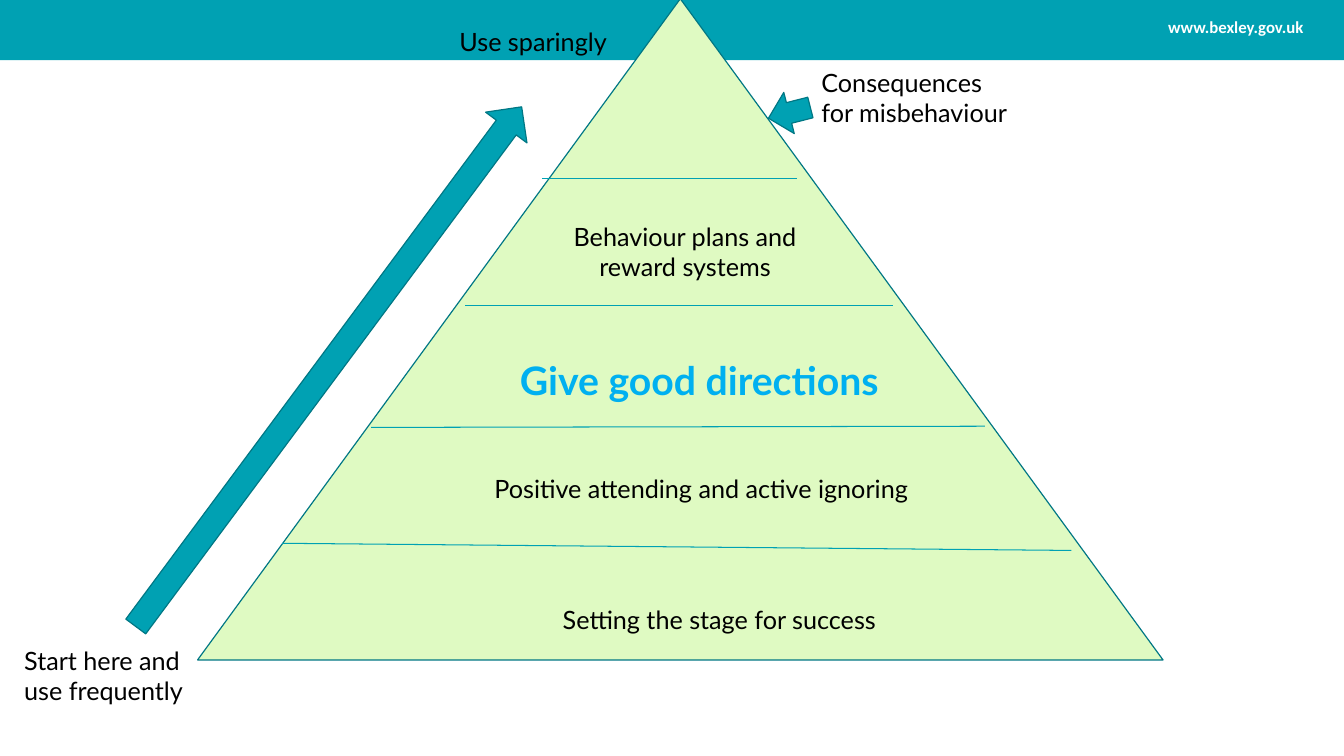
from pptx import Presentation
from pptx.dml.color import RGBColor
from pptx.enum.shapes import MSO_CONNECTOR, MSO_SHAPE
from pptx.enum.text import PP_ALIGN
from pptx.oxml.ns import qn
from pptx.util import Cm, Pt
from lxml.etree import SubElement

TEAL = RGBColor(0x00, 0xA1, 0xB3)
DARK_TEAL = RGBColor(0x00, 0x77, 0x84)
PALE_GREEN = RGBColor(0xDF, 0xFA, 0xC2)
SKY_BLUE = RGBColor(0x00, 0xB0, 0xF0)
BLACK = RGBColor(0x00, 0x00, 0x00)
WHITE = RGBColor(0xFF, 0xFF, 0xFF)

# Places are left, top, width, height in centimetres.
SLIDE_SIZE = (33.87, 19.05)
BANNER = (0, 0, 33.87, 1.52)
PYRAMID = (4.98, -0.03, 24.33, 16.66)
FREQUENCY_ARROW = (0.13, 8.59, 16.31, 1.3)
CONSEQUENCES_ARROW = (19.35, 2.31, 1.09, 1.07)

WEB_ADDRESS = ("www.bexley.gov.uk", (29.01, 0.3, 4.27, 0.76))
HIGHLIGHTED_LEVEL = ("Give good directions", (12.73, 8.86, 9.78, 1.45))
LEVELS = [
    ("Setting the stage for success", (9.09, 15.11, 18.08, 1.02)),
    ("Positive attending and active ignoring", (9.7, 11.79, 15.95, 1.02)),
    ("Behaviour plans and reward systems", (14.05, 5.44, 6.43, 1.8)),
]
SIDE_NOTES = [
    ("Consequences for misbehaviour", (20.45, 1.57, 5.21, 1.8)),
    ("Start here and use frequently", (0.36, 16.13, 4.93, 1.8)),
    ("Use sparingly", (11.33, 0.53, 4.45, 1.02)),
]
# Start x, start y, end x, end y
DIVIDERS = [
    (7.11, 13.69, 27, 13.87),
    (9.35, 10.77, 24.82, 10.74),
    (11.73, 7.7, 22.5, 7.7),
    (13.67, 4.5, 20.09, 4.5),
]


def to_cm(values):
    return [Cm(value) for value in values]


def add_filled(slide, preset, place, fill, outline=None, rotation=0):
    shape = slide.shapes.add_shape(preset, *to_cm(place))
    shape.shadow.inherit = False
    shape.rotation = rotation
    shape.fill.solid()
    shape.fill.fore_color.rgb = fill
    if outline is None:
        shape.line.fill.background()
    else:
        shape.line.color.rgb = outline
        shape.line.width = Pt(0.85)
    return shape


def add_divider(slide, ends):
    divider = slide.shapes.add_connector(MSO_CONNECTOR.STRAIGHT, *to_cm(ends))
    divider.line.color.rgb = TEAL
    divider.line.width = Pt(0.75)
    SubElement(divider._element.spPr, qn("a:effectLst"))


def add_label(slide, label, align=PP_ALIGN.CENTER, size=18, color=BLACK,
              bold=False, typeface="Lato"):
    wording, place = label
    frame = slide.shapes.add_textbox(*to_cm(place)).text_frame
    frame.word_wrap = True
    frame.text = wording
    paragraph = frame.paragraphs[0]
    paragraph.alignment = align
    font = paragraph.runs[0].font
    font.name = typeface
    font.size = Pt(size)
    font.bold = bold
    font.color.rgb = color


def main():
    deck = Presentation()
    deck.slide_width, deck.slide_height = to_cm(SLIDE_SIZE)
    slide = deck.slides.add_slide(deck.slide_layouts[6])

    add_filled(slide, MSO_SHAPE.RECTANGLE, BANNER, TEAL)
    add_label(slide, WEB_ADDRESS, size=12, color=WHITE, bold=True,
              typeface="Calibri")

    add_filled(slide, MSO_SHAPE.ISOSCELES_TRIANGLE, PYRAMID, PALE_GREEN, DARK_TEAL)
    for ends in DIVIDERS:
        add_divider(slide, ends)
    for level in LEVELS:
        add_label(slide, level)
    add_label(slide, HIGHLIGHTED_LEVEL, size=28, color=SKY_BLUE, bold=True)

    frequency_arrow = add_filled(slide, MSO_SHAPE.RIGHT_ARROW, FREQUENCY_ARROW,
                                 TEAL, DARK_TEAL, rotation=306.6)
    frequency_arrow.adjustments[0] = 0.48
    add_filled(slide, MSO_SHAPE.LEFT_ARROW, CONSEQUENCES_ARROW,
               TEAL, DARK_TEAL, rotation=345.7)
    for note in SIDE_NOTES:
        add_label(slide, note, align=PP_ALIGN.LEFT)

    deck.save("out.pptx")


if __name__ == "__main__":
    main()
